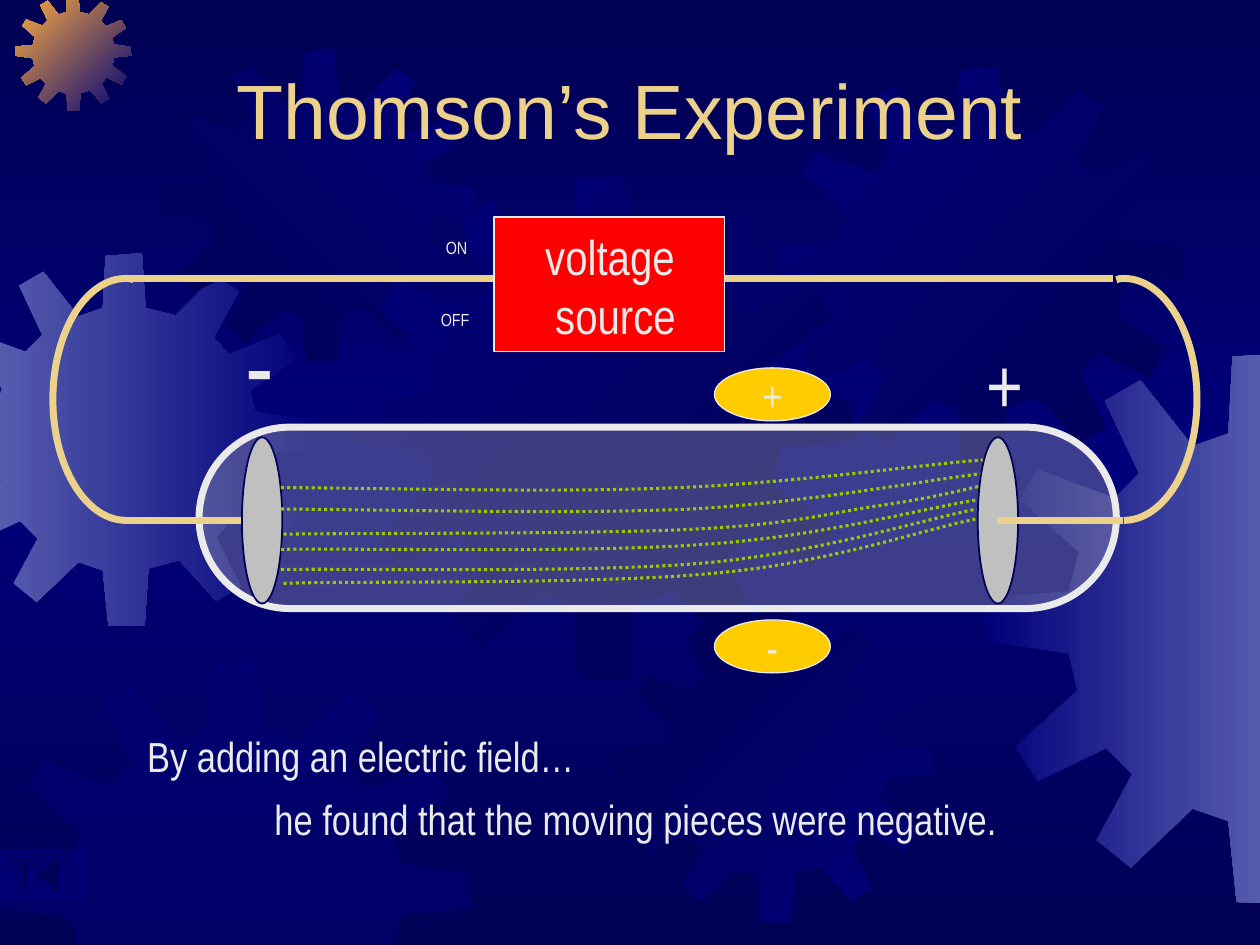
from copy import deepcopy
from dataclasses import dataclass

from lxml import etree
from pptx import Presentation
from pptx.dml.color import RGBColor
from pptx.enum.dml import MSO_LINE
from pptx.enum.shapes import MSO_CONNECTOR, MSO_SHAPE
from pptx.enum.text import MSO_ANCHOR, PP_ALIGN
from pptx.oxml.ns import qn
from pptx.util import Inches, Pt

CENTER, LEFT, MIDDLE = PP_ALIGN.CENTER, PP_ALIGN.LEFT, MSO_ANCHOR.MIDDLE
OVAL, RECT, PILL = MSO_SHAPE.OVAL, MSO_SHAPE.RECTANGLE, MSO_SHAPE.ROUNDED_RECTANGLE
BACK_BUTTON = MSO_SHAPE.ACTION_BUTTON_BEGINNING
DOTTED, STRAIGHT = MSO_LINE.ROUND_DOT, MSO_CONNECTOR.STRAIGHT
SLIDE_W, SLIDE_H = 10, 7.5
NAVY, BLUE, HAZE, ORANGE = "000054", "00007A", "555BAD", "FCAB40"
SAND, PALE, GREY, GOLD, RED, LIME = "EBD189", "EAEAEA", "C0C0C0", "FFCC00", "FF0000", "99CC00"

GEAR_SIZE = 4.01
GEAR_OUTLINE = [
    (2.55, .67), (2.23, .59), (2.19, 0), (1.8, .03), (1.77, .59), (1.51, .68),
    (1.13, .2), (.87, .35), (1.12, .88), (.94, 1.06), (.38, .85), (.25, 1.07),
    (.68, 1.45), (.61, 1.74), (.01, 1.78), (0, 2.1), (.61, 2.19), (.67, 2.46),
    (.22, 2.87), (.38, 3.12), (.88, 2.88), (1.07, 3.07), (.81, 3.55), (1.06, 3.75),
    (1.51, 3.32), (1.77, 3.41), (1.83, 4), (2.22, 4.01), (2.26, 3.39), (2.59, 3.3),
    (2.99, 3.74), (3.25, 3.58), (2.99, 3.06), (3.16, 2.84), (3.68, 3.09), (3.84, 2.81),
    (3.36, 2.46), (3.42, 2.16), (4.01, 2.1), (4, 1.8), (3.41, 1.71), (3.35, 1.48),
    (3.83, 1.14), (3.67, .87), (3.13, 1.09), (2.96, .91), (3.23, .41), (2.97, .25),
]
Points = list[tuple[float, float]]


@dataclass
class Gear:
    left: float
    top: float
    size: float
    colors: list[str]
    angle: int = 0


@dataclass
class Label:
    left: float
    top: float
    width: float
    height: float
    lines: list[str]
    size: int
    align: PP_ALIGN = LEFT


GEARS = [
    Gear(-.49, 2.01, 2.96, [HAZE, BLUE]),
    Gear(.12, -.04, .92, [ORANGE, BLUE], 45),
    Gear(1.3, .39, 2.48, [NAVY, BLUE], 315),
    Gear(2.77, 1.39, 4.01, [BLUE, NAVY], 45),
    Gear(0, 5.25, 3.74, [BLUE]),
    Gear(4.91, 4.84, 2.48, [NAVY, BLUE], 45),
    Gear(6.18, .53, 3.2, [BLUE, NAVY], 45),
    Gear(7.82, 2.8, 4.37, [BLUE, HAZE]),
]
ELECTRODE_SIGNS = [
    Label(7.73, 2.62, .56, .83, ["+"], 44),
    Label(1.85, 2.32, .48, 1.1, ["-"], 60),
]
SOURCE_LABELS = [
    Label(4.1, 1.75, 1.57, 1.03, ["voltage ", "source"], 28, CENTER),
    Label(3.4, 2.4, .48, .27, ["OFF"], 10),
    Label(3.44, 1.83, .41, .27, ["ON"], 10),
]
FINDINGS = [
    Label(1.07, 5.75, 4.34, .5, ["By adding an electric field…"], 24),
    Label(2.08, 6.25, 7.19, .5, ["he found that the moving pieces were negative."], 24),
]
LEFT_BEND = [(1, 4.13), (.68, 4.13), (.42, 3.7), (.42, 3.17), (.42, 2.64),
             (.68, 2.21), (1, 2.21), (1.02, 2.21), (1.04, 2.21), (1.06, 2.22)]
RIGHT_BEND = [(9.92 - x, y) for x, y in LEFT_BEND]
BEAMS = [
    [(2.23, 3.87), (3.37, 3.88), (4.47, 3.91), (5.4, 3.87), (6.33, 3.83), (7.3, 3.69), (7.8, 3.65)],
    [(2.25, 4.24), (2.79, 4.23), (4.73, 4.24), (5.51, 4.2), (6.29, 4.16),
     (6.55, 4.08), (6.93, 4.02), (7.3, 3.97), (7.6, 3.9), (7.77, 3.86)],
    [(2.23, 4.04), (3.39, 4.05), (4.56, 4.08), (5.48, 4.04), (6.4, 3.99), (7.3, 3.82), (7.78, 3.76)],
    [(2.23, 4.36), (2.79, 4.35), (4.67, 4.39), (5.59, 4.32), (6.51, 4.26), (7.3, 4.04), (7.74, 3.97)],
    [(2.23, 4.52), (2.79, 4.51), (4.65, 4.55), (5.57, 4.47), (6.49, 4.39), (7.3, 4.13), (7.75, 4.04)],
    [(2.25, 4.63), (2.82, 4.61), (4.74, 4.64), (5.66, 4.55), (6.57, 4.47), (7.3, 4.21), (7.74, 4.12)],
]


def rgb(color: str) -> RGBColor:
    return RGBColor.from_string(color)


def fill_solid(shape, color: str, opacity: int = 100) -> None:
    shape.fill.solid()
    shape.fill.fore_color.rgb = rgb(color)
    if opacity < 100:
        tint = shape._element.spPr.find(qn("a:solidFill"))[0]
        etree.SubElement(tint, qn("a:alpha"), val=str(opacity * 1000))


def fill_gradient(fill, element, colors: list[str], angle: int) -> None:
    """Spread the colours evenly along a clockwise angle."""
    fill.gradient()
    fill.gradient_angle = (360 - angle) % 360
    stops = element.find(".//" + qn("a:gsLst"))
    for _ in colors[2:]:
        stops.append(deepcopy(stops[0]))
    for index, (stop, color) in enumerate(zip(fill.gradient_stops, colors)):
        stop.color.rgb = rgb(color)
        stop.position = index / (len(colors) - 1)


def set_line(line, color: str, width: float) -> None:
    line.color.rgb = rgb(color)
    line.width = Pt(width)


def clip(points: Points, axis: int, limit: float, sign: int) -> Points:
    """Keep the part of a polygon where sign * (coordinate - limit) >= 0."""
    kept = []
    for start, end in zip(points[-1:] + points[:-1], points):
        before, after = (sign * (point[axis] - limit) for point in (start, end))
        if before * after < 0:
            share = before / (before - after)
            kept.append(tuple(a + share * (b - a) for a, b in zip(start, end)))
        if after >= 0:
            kept.append(end)
    return kept


def add_outline(shapes, points: Points, close: bool):
    (x, y), *others = [(Inches(x), Inches(y)) for x, y in points]
    builder = shapes.build_freeform(x, y)
    builder.add_line_segments(others, close=close)
    shape = builder.convert_to_shape()
    shape.shadow.inherit = False
    return shape


def add_gear(shapes, gear: Gear) -> None:
    scale = gear.size / GEAR_SIZE
    points = [(gear.left + x * scale, gear.top + y * scale) for x, y in GEAR_OUTLINE]
    for axis, limit, sign in [(0, 0, 1), (0, SLIDE_W, -1), (1, 0, 1), (1, SLIDE_H, -1)]:
        points = clip(points, axis, limit, sign)
    shape = add_outline(shapes, points, True)
    shape.line.fill.background()
    if len(gear.colors) == 1:
        fill_solid(shape, gear.colors[0], 50)
    else:
        fill_gradient(shape.fill, shape._element, gear.colors, gear.angle)


def add_curve(shapes, points: Points, color: str, width: float):
    """Draw Bezier segments from a start point and triples of control points."""
    shape = add_outline(shapes, points, False)
    shape.fill.background()
    set_line(shape.line, color, width)
    route = shape._element.find(".//" + qn("a:path"))
    steps = route.findall(qn("a:lnTo"))
    for first in range(0, len(steps), 3):
        bend = etree.SubElement(route, qn("a:cubicBezTo"))
        for step in steps[first:first + 3]:
            bend.append(step[0])
            route.remove(step)
    return shape


def add_wire(shapes, start: float, end: float, y: float) -> None:
    wire = shapes.add_connector(STRAIGHT, Inches(start), Inches(y), Inches(end), Inches(y))
    set_line(wire.line, SAND, 4)
    etree.SubElement(wire._element.spPr, qn("a:effectLst"))


def add_block(shapes, kind, box, color: str, border: str, width: float, opacity: int = 100):
    shape = shapes.add_shape(kind, *map(Inches, box))
    shape.shadow.inherit = False
    fill_solid(shape, color, opacity)
    set_line(shape.line, border, width)
    return shape


def write(frame, lines: list[str], size: int, align=LEFT, face="Arial Narrow", color=PALE) -> None:
    frame.text = "\n".join(lines)
    for paragraph in frame.paragraphs:
        paragraph.alignment = align
        for name, value in {"name": face, "size": Pt(size)}.items():
            setattr(paragraph.font, name, value)
        paragraph.font.color.rgb = rgb(color)


def add_label(shapes, label: Label) -> None:
    box = map(Inches, (label.left, label.top, label.width, label.height))
    frame = shapes.add_textbox(*box).text_frame
    frame.word_wrap = False
    write(frame, label.lines, label.size, label.align)


def main() -> None:
    deck = Presentation()
    deck.slide_width, deck.slide_height = Inches(SLIDE_W), Inches(SLIDE_H)
    slide = deck.slides.add_slide(deck.slide_layouts[5])
    shapes = slide.shapes
    fill_gradient(slide.background.fill, slide._element, [NAVY, BLUE, NAVY], 90)
    for gear in GEARS:
        add_gear(shapes, gear)

    title = shapes.title
    place = {"left": .65, "top": .45, "width": 8.7, "height": .83}
    for name, value in place.items():
        setattr(title, name, Inches(value))
    title.text_frame.vertical_anchor = MIDDLE
    write(title.text_frame, ["Thomson’s Experiment"], 44, CENTER, "Arial", SAND)
    shapes._spTree.append(title._element)  # above the gears

    for sign in ELECTRODE_SIGNS:
        add_label(shapes, sign)
    tube = add_block(shapes, PILL, (1.58, 3.39, 7.28, 1.44), GREY, PALE, 4, 32)
    tube.adjustments[0] = .5
    add_block(shapes, OVAL, (7.76, 3.47, .32, 1.32), GREY, NAVY, 1)
    for start, end, bend in [(2, 1, LEFT_BEND), (7.91, 8.91, RIGHT_BEND)]:
        add_wire(shapes, start, end, 4.13)
        add_curve(shapes, bend, SAND, 4)
    add_wire(shapes, 1, 8.83, 2.21)
    add_block(shapes, OVAL, (1.92, 3.47, .32, 1.32), GREY, NAVY, 1)
    add_block(shapes, RECT, (3.92, 1.72, 1.83, 1.07), RED, PALE, 1)
    for label in SOURCE_LABELS:
        add_label(shapes, label)
    for charge, top in [("+", 2.92), ("-", 4.92)]:
        plate = add_block(shapes, OVAL, (5.67, top, .92, .42), GOLD, PALE, .75)
        plate.text_frame.word_wrap = False
        plate.text_frame.vertical_anchor = MIDDLE
        write(plate.text_frame, [charge], 24, CENTER)
    for beam in BEAMS:
        add_curve(shapes, beam, LIME, 1.75).line.dash_style = DOTTED
    for finding in FINDINGS:
        add_label(shapes, finding)
    add_block(shapes, BACK_BUTTON, (0, 6.75, .67, .39), BLUE, BLUE, .75, 50)
    deck.save("out.pptx")


if __name__ == "__main__":
    main()
